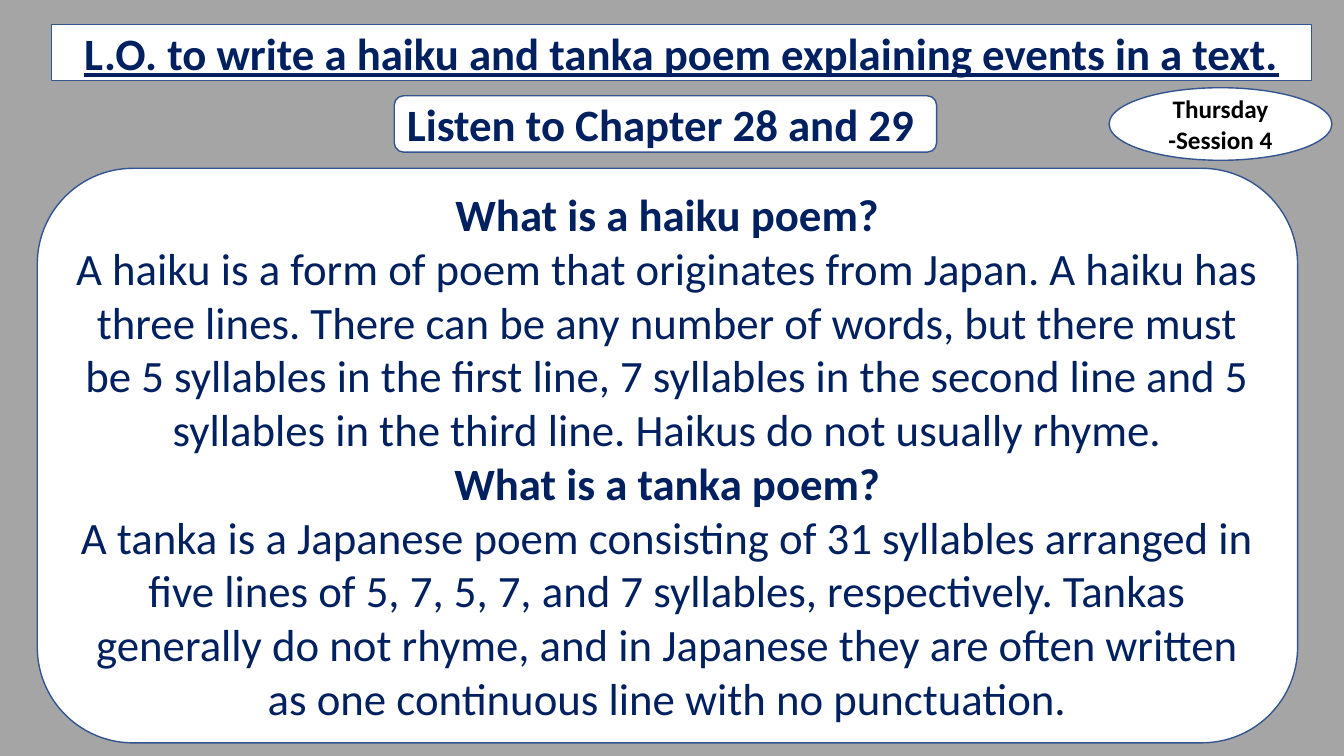
from pptx import Presentation
from pptx.dml.color import RGBColor
from pptx.enum.shapes import MSO_SHAPE
from pptx.enum.text import MSO_ANCHOR, MSO_AUTO_SIZE, PP_ALIGN
from pptx.util import Inches, Pt

ELLIPSE, ROUNDED = MSO_SHAPE.OVAL, MSO_SHAPE.ROUNDED_RECTANGLE
LEFT, CENTER = PP_ALIGN.LEFT, PP_ALIGN.CENTER
MIDDLE, NO_AUTOFIT = MSO_ANCHOR.MIDDLE, MSO_AUTO_SIZE.NONE

SLIDE_WIDTH, SLIDE_HEIGHT = Inches(13.33), Inches(7.5)
PANEL_WIDTH, BANNER_HEIGHT = Inches(12.5), Inches(0.56)
COLORS = {"background": "A5A5A5", "panel": "FFFFFF", "outline": "325491",
          "navy": "002060", "black": "000000"}

LESSON_OBJECTIVE = "L.O. to write a haiku and tanka poem explaining events in a text."
POEM_FORMS = [
    ("What is a haiku poem?",
     "A haiku is a form of poem that originates from Japan. A haiku has three lines. "
     "There can be any number of words, but there must be 5 syllables in the first line, "
     "7 syllables in the second line and 5 syllables in the third line. "
     "Haikus do not usually rhyme."),
    ("What is a tanka poem?",
     "A tanka is a Japanese poem consisting of 31 syllables arranged in five lines of "
     "5, 7, 5, 7, and 7 syllables, respectively. Tankas generally do not rhyme, and in "
     "Japanese they are often written as one continuous line with no punctuation."),
]


def color(name):
    return RGBColor.from_string(COLORS[name])


def set_attributes(target, values):
    for name, value in values.items():
        setattr(target, name, value)


def style_panel(shape):
    """Give a shape the white fill, thin blue outline and centred text area."""
    shape.fill.solid()
    shape.fill.fore_color.rgb = color("panel")
    shape.line.color.rgb = color("outline")
    shape.line.width = Pt(1)
    set_attributes(shape.text_frame, {"word_wrap": True, "auto_size": NO_AUTOFIT,
                                      "vertical_anchor": MIDDLE})


def add_panel(slide, kind, left, top, width, height):
    shape = slide.shapes.add_shape(kind, left, top, width, height)
    shape.shadow.inherit = False
    style_panel(shape)
    return shape


def write(paragraph, text, alignment=CENTER, color_name="navy", **font_values):
    paragraph.alignment = alignment
    run = paragraph.add_run()
    run.text = text
    set_attributes(run.font, {"name": "Calibri", "size": Pt(32), "bold": True, **font_values})
    run.font.color.rgb = color(color_name)


def format_title(slide):
    title = slide.shapes.title
    set_attributes(title, {"left": Inches(0.51), "top": Inches(0.24),
                           "width": PANEL_WIDTH, "height": BANNER_HEIGHT})
    style_panel(title)
    write(title.text_frame.paragraphs[0], LESSON_OBJECTIVE, underline=True)


def add_session_badge(slide):
    badge = add_panel(slide, ELLIPSE, Inches(11), Inches(0.87), Inches(2.21), Inches(0.72))
    paragraph = badge.text_frame.paragraphs[0]
    write(paragraph, "Thursday -Session 4", color_name="black", size=Pt(18))
    paragraph.space_after = Pt(6)


def add_chapter_banner(slide):
    banner = add_panel(slide, ROUNDED, Inches(3.91), Inches(0.95), Inches(5.38), BANNER_HEIGHT)
    write(banner.text_frame.paragraphs[0], "Listen to Chapter 28 and 29", LEFT)


def add_poem_forms(slide):
    panel = add_panel(slide, ROUNDED, Inches(0.37), Inches(1.67), PANEL_WIDTH, Inches(5.7))
    frame = panel.text_frame
    for index, (question, answer) in enumerate(POEM_FORMS):
        heading = frame.add_paragraph() if index else frame.paragraphs[0]
        write(heading, question)
        write(frame.add_paragraph(), answer, bold=False)


def main():
    presentation = Presentation()
    set_attributes(presentation, {"slide_width": SLIDE_WIDTH, "slide_height": SLIDE_HEIGHT})
    title_only = presentation.slide_layouts.get_by_name("Title Only")
    slide = presentation.slides.add_slide(title_only)
    slide.background.fill.solid()
    slide.background.fill.fore_color.rgb = color("background")
    format_title(slide)
    add_session_badge(slide)
    add_chapter_banner(slide)
    add_poem_forms(slide)
    presentation.save("out.pptx")


if __name__ == "__main__":
    main()
